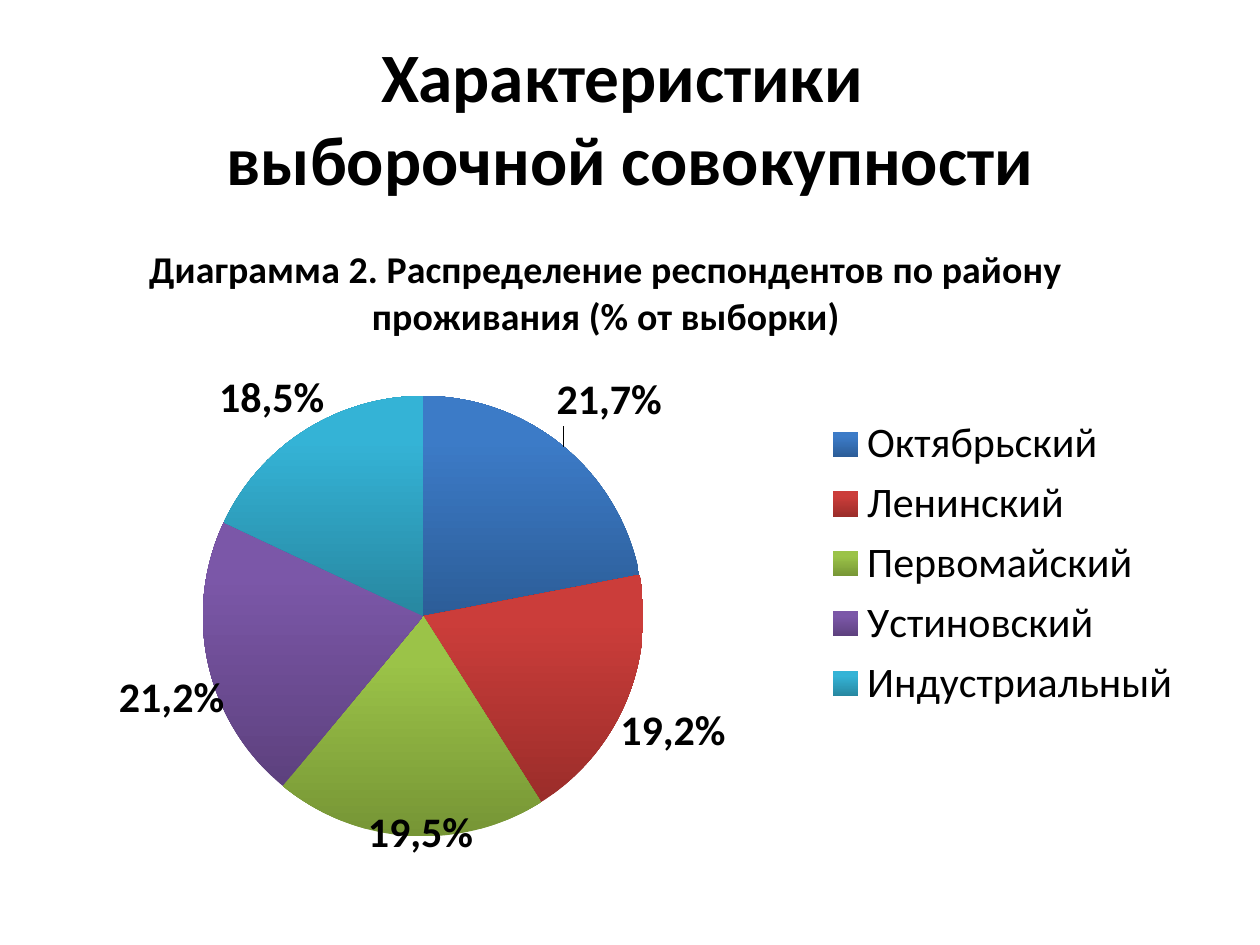
from pptx import Presentation
from pptx.chart.data import CategoryChartData
from pptx.dml.color import RGBColor
from pptx.enum.chart import XL_CHART_TYPE as ChartType
from pptx.enum.chart import XL_LABEL_POSITION as LabelPosition
from pptx.enum.chart import XL_LEGEND_POSITION as LegendPosition
from pptx.enum.text import MSO_ANCHOR as Anchor
from pptx.enum.text import PP_ALIGN as Align
from pptx.oxml import parse_xml
from pptx.oxml.ns import nsdecls
from pptx.util import Inches, Pt

COLUMNS, ROWS = 10, 7.5
COLORS = {"text": "000000", "page": "FFFFFF"}
# District: value, label, slice colours from bottom to top, label shift
DISTRICTS = {
    "Октябрьский": (22, "21,7%", ("2C5D98", "3C7BC7"), (-0.01, -0.02)),
    "Ленинский": (19, "19,2%", ("9B2D2A", "CB3D3A"), (-0.01, 0)),
    "Первомайский": (20, "19,5%", ("769535", "9BC348"), (0.01, -0.05)),
    "Устиновский": (21, "21,2%", ("5D417E", "7B57A8"), (0.02, 0.01)),
    "Индустриальный": (18, "18,5%", ("2787A0", "34B3D6"), (0.02, 0)),
}


def set_layout(element, after=None, inner=False, shift=False, **shares):
    """Place or shift a chart part by shares of the chart's size."""
    for old in element.findall("{*}layout"):
        element.remove(old)
    target = '<c:layoutTarget val="inner"/>' if inner else ""
    modes = "" if shift else '<c:xMode val="edge"/><c:yMode val="edge"/>'
    sizes = "".join(f'<c:{key} val="{share}"/>' for key, share in shares.items())
    layout = parse_xml(
        f'<c:layout {nsdecls("c")}><c:manualLayout>{target}{modes}{sizes}'
        "</c:manualLayout></c:layout>"
    )
    spot = element.index(element.find("{*}" + after)) + 1 if after else 0
    element.insert(spot, layout)


class SlideBuilder:
    font_name = "Calibri"

    def __init__(self, deck):
        self.deck = deck
        self.page = deck.slides.add_slide(deck.slide_layouts[6])
        background = self.page.background.fill
        background.solid()
        background.fore_color.rgb = RGBColor.from_string(COLORS["page"])

    def place(self, left, top, width, height):
        """Turn grid columns and rows into lengths."""
        column = self.deck.slide_width / COLUMNS
        row = self.deck.slide_height / ROWS
        return [int(count * unit) for count, unit in
                zip((left, top, width, height), (column, row, column, row))]

    def style(self, font, size, bold=False):
        values = {"name": self.font_name, "size": Pt(size), "bold": bold}
        for key, value in values.items():
            setattr(font, key, value)
        font.color.rgb = RGBColor.from_string(COLORS["text"])

    def heading(self, text, area, size):
        box = self.page.shapes.add_textbox(*self.place(*area))
        frame = box.text_frame
        for key, value in {"word_wrap": True, "vertical_anchor": Anchor.MIDDLE}.items():
            setattr(frame, key, value)
        para = frame.paragraphs[0]
        para.text = text
        para.alignment = Align.CENTER
        for span in para.runs:
            self.style(span.font, size, bold=True)

    def pie(self, title, districts, area):
        data = CategoryChartData(number_format="0")
        data.categories = list(districts)
        data.add_series("Series 1", [row[0] for row in districts.values()])
        chart = self.page.shapes.add_chart(
            ChartType.PIE, *self.place(*area), data).chart
        self.style(chart.font, 18)
        self.chart_title(chart, title)
        self.legend(chart)
        plot = chart.plots[0]
        plot.vary_by_categories = True
        set_layout(chart._chartSpace.chart.plotArea, inner=True,
                   x=0.15, y=0.26, w=0.38, h=0.63)
        self.slices(plot, districts)

    def chart_title(self, chart, text):
        chart.has_title = True
        title = chart.chart_title
        title.text_frame.text = text
        para = title.text_frame.paragraphs[0]
        para.alignment = Align.CENTER
        self.style(para.runs[0].font, 21.6, bold=True)
        set_layout(title._element, after="tx", x=0.1, y=0.03)

    def legend(self, chart):
        chart.has_legend = True
        legend = chart.legend
        for key, value in {"position": LegendPosition.RIGHT,
                           "include_in_layout": False}.items():
            setattr(legend, key, value)
        self.style(legend.font, 24)
        set_layout(legend._element, after="legendPos",
                   x=0.68, y=0.28, w=0.31, h=0.44)

    def slices(self, plot, districts):
        plot.has_data_labels = True
        labels = plot.data_labels
        for key, value in {"show_percentage": True, "show_value": False,
                           "position": LabelPosition.BEST_FIT}.items():
            setattr(labels, key, value)
        self.style(labels.font, 24, bold=True)
        series = plot.series[0]
        for index, (_, text, shades, (right, down)) in enumerate(districts.values()):
            point = series.points[index]
            fill = point.format.fill
            fill.gradient()
            fill.gradient_angle = 90
            for stop, shade, position in zip(fill.gradient_stops, shades, (0, 0.8)):
                stop.color.rgb = RGBColor.from_string(shade)
                stop.position = position
            label = point.data_label
            label.text_frame.text = text
            self.style(label.text_frame.paragraphs[0].runs[0].font, 24, bold=True)
            label.position = LabelPosition.BEST_FIT
        for entry, row in zip(series._element.findall("{*}dLbls/{*}dLbl"),
                              districts.values()):
            right, down = row[-1]
            set_layout(entry, after="idx", shift=True, x=right, y=down)


def main():
    deck = Presentation()
    deck.slide_width, deck.slide_height = Inches(COLUMNS), Inches(ROWS)
    slide = SlideBuilder(deck)
    slide.heading("Характеристики \vвыборочной совокупности",
                  (0.5, 0.3, 9, 1.25), 39.6)
    slide.pie("Диаграмма 2. Распределение респондентов по району "
              "проживания (% от выборки)",
              DISTRICTS, (0.2, 1.7, 9.29, 5.55))
    deck.save("out.pptx")


if __name__ == "__main__":
    main()
